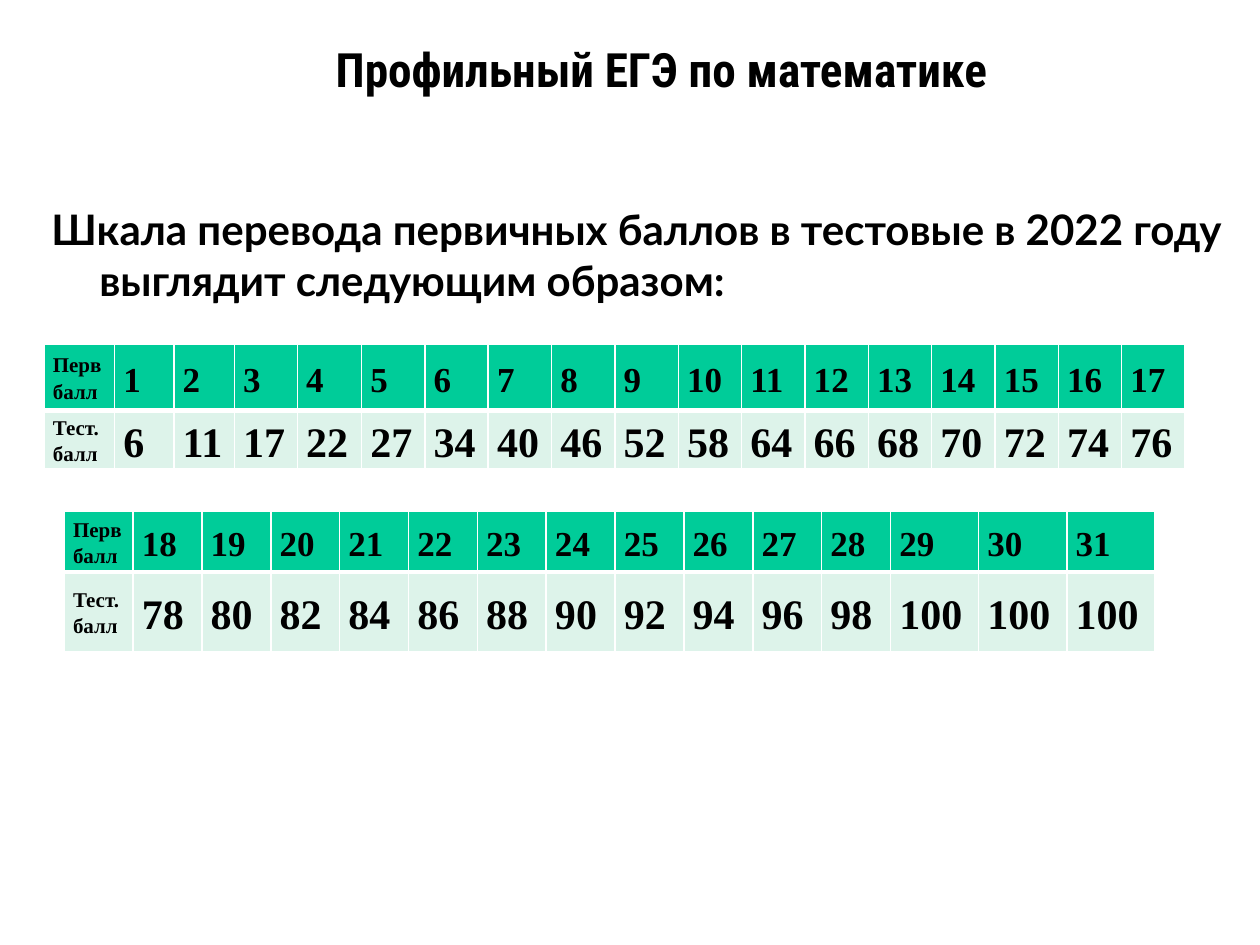
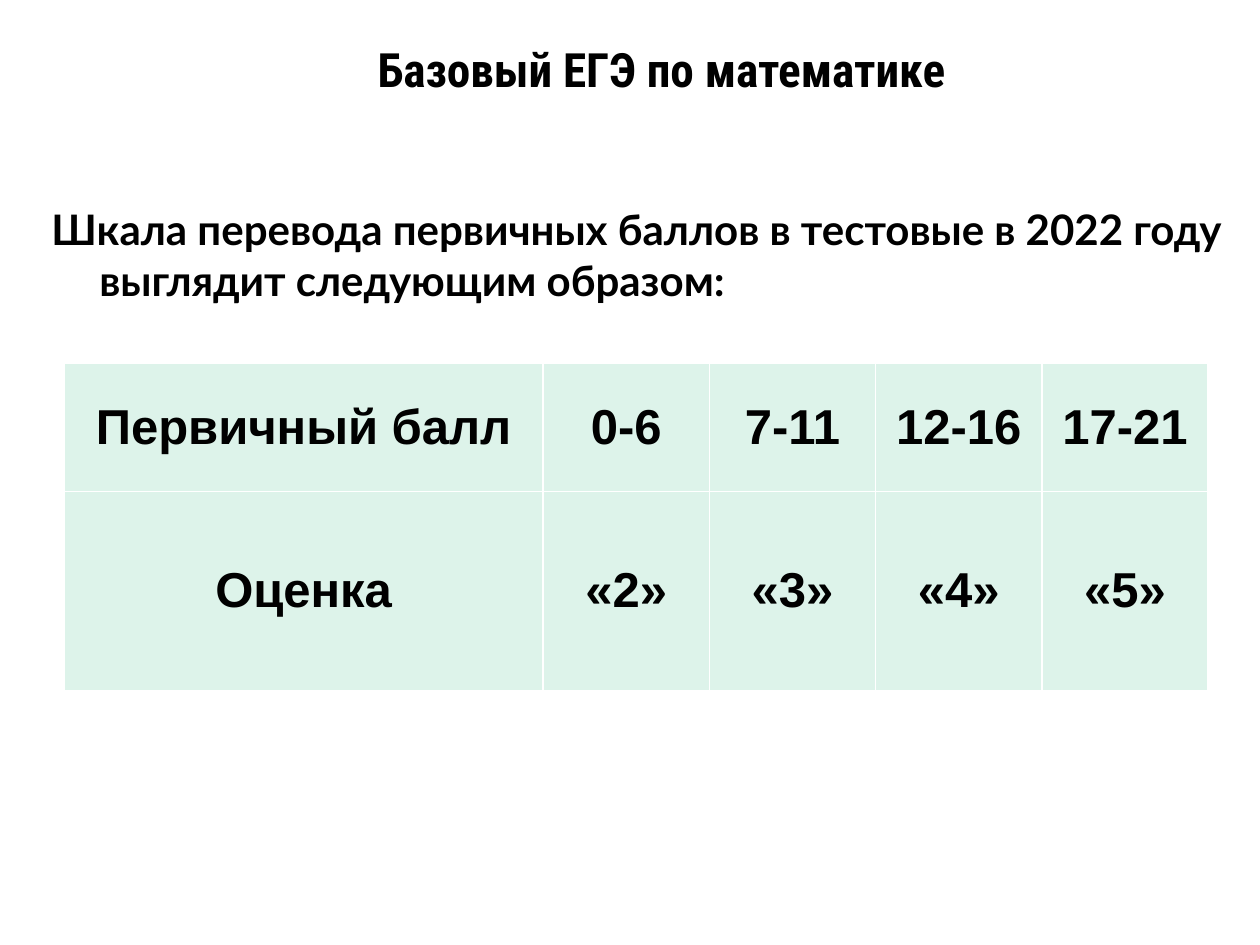
from dataclasses import dataclass

from lxml.etree import SubElement
from pptx import Presentation
from pptx.dml.color import RGBColor
from pptx.enum.text import MSO_ANCHOR as Anchor, PP_ALIGN as Align
from pptx.oxml.ns import qn
from pptx.util import Inches, Pt

BLACK, WHITE, GREEN, MINT = "000000", "FFFFFF", "00CC99", "DDF3EA"
SUBTITLE = "Шкала перевода первичных баллов в тестовые в 2022 году выглядит следующим образом:"
SCORE_FONT = "Times New Roman"


@dataclass
class RowStyle:
    """Height, fill and text sizes of one table row."""

    height: float
    fill: str
    label_size: int
    value_size: int


@dataclass
class ScoreTable:
    """Position, contents and format of one conversion table."""

    left: float
    top: float
    columns: list[float]
    rows: list[list[str]]
    styles: list[RowStyle]
    font: str = SCORE_FONT
    align: Align = Align.JUSTIFY
    spacing: float = 1.15
    divider: float = 3


@dataclass
class ScorePage:
    """Title and tables of one slide."""

    title: str
    tables: list[ScoreTable]


def color(value: str) -> RGBColor:
    """Turn a hex string into a colour."""
    return RGBColor.from_string(value)


def write(frame, text: str, *, font: str, size: float, align=Align.LEFT,
          spacing: float | None = None, hanging: float = 0) -> None:
    """Write one bold black paragraph into a text frame."""
    frame.word_wrap = True
    para = frame.paragraphs[0]
    para.alignment = align
    if spacing:
        para.line_spacing = spacing
    if hanging:
        indent = Inches(hanging)
        para._p.get_or_add_pPr().set("marL", str(indent))
        para._p.get_or_add_pPr().set("indent", str(-indent))
    span = para.add_run()
    span.text = text
    span.font.name = font
    span.font.size = Pt(size)
    span.font.bold = True
    span.font.color.rgb = color(BLACK)


def add_text(page, left: float, top: float, width: float, height: float,
             text: str, anchor=Anchor.TOP, **style) -> None:
    """Add a text box with one paragraph."""
    box = page.shapes.add_textbox(Inches(left), Inches(top), Inches(width), Inches(height))
    box.text_frame.vertical_anchor = anchor
    write(box.text_frame, text, **style)


def set_borders(cell, top: float, bottom: float) -> None:
    """Give a cell white borders, with its own top and bottom widths."""
    properties = cell._tc.get_or_add_tcPr()
    for side, points in {"lnL": 1, "lnR": 1, "lnT": top, "lnB": bottom}.items():
        line = SubElement(properties, qn(f"a:{side}"), w=str(Pt(points)))
        fill = SubElement(line, qn("a:solidFill"))
        SubElement(fill, qn("a:srgbClr"), val=WHITE)


def add_score_table(page, spec_table: ScoreTable) -> None:
    """Draw a conversion table with a label column."""
    styles, columns = spec_table.styles, spec_table.columns
    grid = page.shapes.add_table(
        len(styles), len(columns), Inches(spec_table.left), Inches(spec_table.top),
        Inches(sum(columns)), Inches(sum(style.height for style in styles))).table
    grid.first_row = grid.horz_banding = False
    for column, width in zip(grid.columns, columns):
        column.width = Inches(width)
    last = len(styles) - 1
    for index, (style, texts) in enumerate(zip(styles, spec_table.rows)):
        grid.rows[index].height = Inches(style.height)
        for position, text in enumerate(texts):
            cell = grid.cell(index, position)
            cell.margin_left = cell.margin_right = Inches(0.07)
            cell.margin_top = cell.margin_bottom = 0
            cell.vertical_anchor = Anchor.MIDDLE
            set_borders(cell, top=spec_table.divider if index else 1,
                        bottom=spec_table.divider if index < last else 1)
            cell.fill.solid()
            cell.fill.fore_color.rgb = color(style.fill)
            write(cell.text_frame, text, font=spec_table.font,
                  size=style.value_size if position else style.label_size,
                  align=spec_table.align, spacing=spec_table.spacing)


def add_page(deck, content: ScorePage) -> None:
    """Add a slide with the shared title, subtitle and its tables."""
    page = deck.slides.add_slide(deck.slide_layouts[6])
    add_text(page, 0.31, 1.57, 9.69, 1, SUBTITLE, font="Lato", size=24, hanging=0.38)
    for score_table in content.tables:
        add_score_table(page, score_table)
    add_text(page, 0.5, 0.17, 9.5, 0.75, content.title, anchor=Anchor.MIDDLE,
             font="Roboto Condensed", size=27, align=Align.CENTER)


def score_rows(first: int, results: list[int]) -> list[list[str]]:
    """Pair consecutive primary scores with their test results."""
    primary = range(first, first + len(results))
    return [["Перв балл", *map(str, primary)], ["Тест. балл", *map(str, results)]]


def score_styles(head: float, body: float) -> list[RowStyle]:
    """Style the primary and test score rows."""
    return [RowStyle(head, GREEN, 12, 20), RowStyle(body, MINT, 12, 24)]


LOW_RESULTS = [6, 11, 17, 22, 27, 34, 40, 46, 52, *range(58, 65, 6), *range(66, 77, 2)]
HIGH_RESULTS = [*range(78, 101, 2), 100, 100]
LOW_COLUMNS = [0.56, 0.47, 0.48, 0.5, 0.51]

PAGES = [
    ScorePage("Профильный ЕГЭ по математике", [
        ScoreTable(0.35, 2.73, LOW_COLUMNS + [(9.06 - sum(LOW_COLUMNS)) / 13] * 13,
                   score_rows(1, LOW_RESULTS), score_styles(0.53, 0.46)),
        ScoreTable(0.51, 4.06, [(8.66 - 3 * 0.7) / 12] * 12 + [0.7] * 3,
                   score_rows(18, HIGH_RESULTS), score_styles(0.48, 0.63)),
    ]),
    ScorePage("Базовый ЕГЭ по математике", [
        ScoreTable(0.51, 2.88, [3.8] + [1.32] * 4,
                   [["Первичный балл", "0-6", "7-11", "12-16", "17-21"],
                    ["Оценка", *(f"«{grade}»" for grade in range(2, 6))]],
                   [RowStyle(1.02, MINT, 28, 28), RowStyle(1.58, MINT, 28, 28)],
                   font="Arial", align=Align.CENTER, spacing=1.0, divider=1),
    ]),
]


def main() -> None:
    """Build and save the deck."""
    deck = Presentation()
    deck.slide_width, deck.slide_height = Inches(10), Inches(7.5)
    for content in PAGES:
        add_page(deck, content)
    deck.save("out.pptx")


if __name__ == "__main__":
    main()
